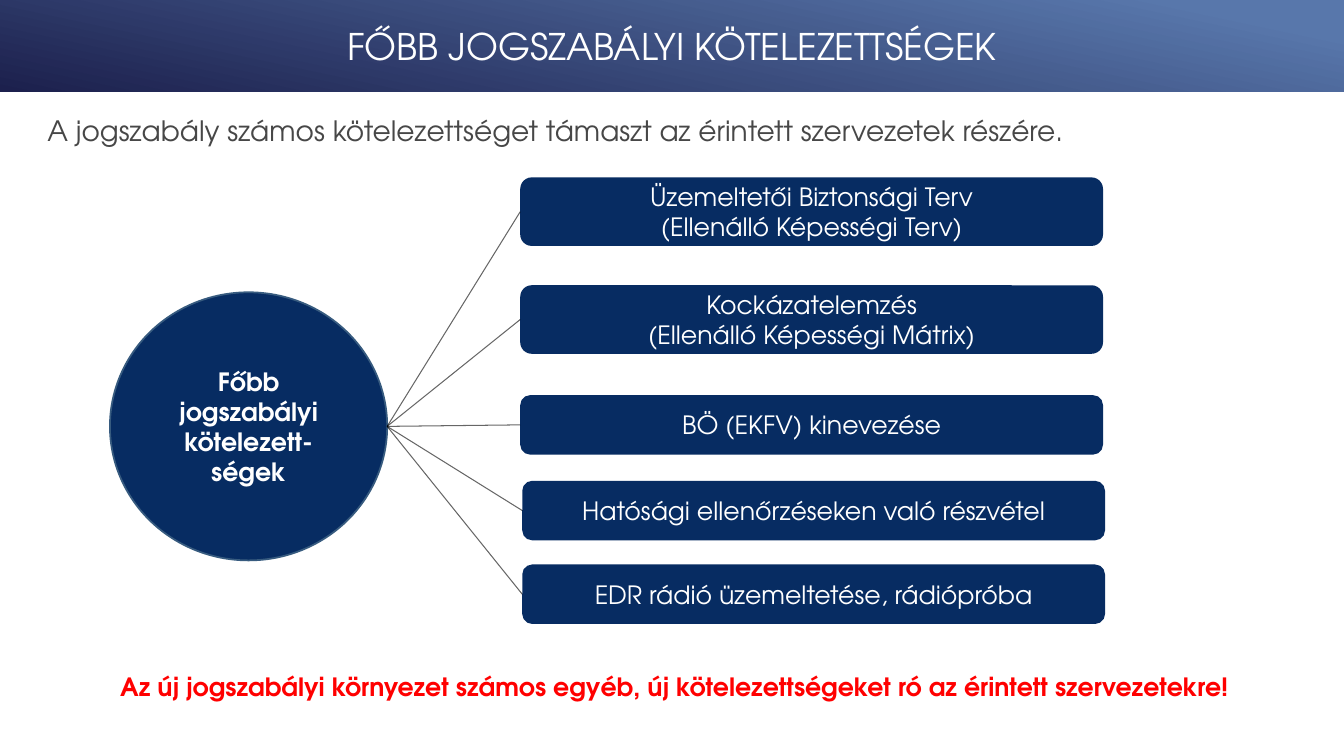
from lxml import etree
from pptx import Presentation
from pptx.dml.color import RGBColor
from pptx.enum.shapes import MSO_CONNECTOR, MSO_SHAPE
from pptx.enum.text import MSO_ANCHOR, MSO_AUTO_SIZE, PP_ALIGN
from pptx.oxml.ns import qn
from pptx.util import Inches, Pt

ROUND, OVAL = MSO_SHAPE.ROUNDED_RECTANGLE, MSO_SHAPE.OVAL
LINE = MSO_CONNECTOR.STRAIGHT
MID, TOP = MSO_ANCHOR.MIDDLE, MSO_ANCHOR.TOP
JUST, CENTER = PP_ALIGN.JUSTIFY, PP_ALIGN.CENTER
FIXED = MSO_AUTO_SIZE.NONE

FONT = "TeX Gyre Adventor"
NAVY, WHITE, RED, GREY = "072C62", "FFFFFF", "FF0000", "474747"
RIM, BLACK, LIGHT, DARK = "375B7F", "000000", "5877AB", "1C204D"

DUTIES = [
    (5.16, 1.76, 0.68, "Üzemeltetői Biztonsági Terv\n(Ellenálló Képességi Terv)"),
    (5.16, 2.83, 0.68, "Kockázatelemzés\n(Ellenálló Képességi Mátrix)"),
    (5.16, 3.92, 0.59, "BÖ (EKFV) kinevezése"),
    (5.18, 4.77, 0.59, "Hatósági ellenőrzéseken való részvétel"),
    (5.18, 5.60, 0.59, "EDR rádió üzemeltetése, rádiópróba"),
]


def paint(color, code):
    color.rgb = RGBColor.from_string(code)


def apply(item, values):
    for name, value in values.items():
        setattr(item, name, value)


class Board:
    def __init__(self, deck):
        self.slide = deck.slides.add_slide(deck.slide_layouts[1])
        self.shapes = self.slide.shapes
        self.font = {"name": FONT, "size": Pt(18), "bold": False}

    def label(self, shape, text, code, align=CENTER, anchor=MID, **font):
        frame = shape.text_frame
        apply(frame, {"text": text, "word_wrap": True,
                      "auto_size": FIXED, "vertical_anchor": anchor})
        for para in frame.paragraphs:
            para.alignment = align
            for run in para.runs:
                apply(run.font, {**self.font, **font})
                paint(run.font.color, code)

    def place(self, shape, *box):
        names = ("left", "top", "width", "height")
        apply(shape, dict(zip(names, map(Inches, box))))

    def title(self, text, *box):
        shape = self.shapes.title
        self.place(shape, *box)
        self.label(shape, text, GREY, JUST, size=Pt(20))

    def banner(self, text, *box):
        shape = self.slide.placeholders[1]
        self.place(shape, *box)
        shape.fill.gradient()
        shape.fill.gradient_angle = 258
        stops = zip(shape.fill.gradient_stops, ((0.1, LIGHT), (1, DARK)))
        for stop, (spot, code) in stops:
            stop.position = spot
            paint(stop.color, code)
        self.label(shape, text, WHITE, size=Pt(26.2))
        para = shape.text_frame.paragraphs[0]
        para.space_after = Pt(6)
        props = para._p.get_or_add_pPr()
        for name in ("marL", "indent"):
            props.set(name, "0")
        etree.SubElement(props, qn("a:buNone"))

    def block(self, kind, text, *box, rim=None, **font):
        shape = self.shapes.add_shape(kind, *map(Inches, box))
        shape.shadow.inherit = False
        shape.fill.solid()
        paint(shape.fill.fore_color, NAVY)
        if rim:
            shape.line.width = Pt(1.25)
            paint(shape.line.color, rim)
        else:
            shape.line.fill.background()
        self.label(shape, text, WHITE, **font)
        return shape

    def note(self, text, *box):
        shape = self.shapes.add_textbox(*map(Inches, box))
        self.label(shape, text, RED, anchor=TOP, bold=True)

    def link(self, hub, duty):
        x, y = hub.left + hub.width, hub.top + hub.height // 2
        wire = self.shapes.add_connector(LINE, x, y, x, y)
        wire.end_connect(duty, 1)
        wire.line.width = Pt(0.75)
        paint(wire.line.color, BLACK)
        props = wire._element.spPr
        tint = props.find(".//" + qn("a:srgbClr"))
        etree.SubElement(tint, qn("a:alpha"), val="60000")
        etree.SubElement(props, qn("a:effectLst"))


def main():
    deck = Presentation()
    apply(deck, {"slide_width": Inches(13.33), "slide_height": Inches(7.5)})
    board = Board(deck)
    board.title("A jogszabály számos kötelezettséget támaszt "
                "az érintett szervezetek részére.", 0.37, 1.05, 13.22, 0.48)
    board.banner("FŐBB JOGSZABÁLYI KÖTELEZETTSÉGEK", 0, 0, 13.33, 0.91)
    hub = board.block(OVAL, "Főbb jogszabályi kötelezett-ségek",
                      1.09, 2.9, 2.75, 2.66, rim=RIM, bold=True)
    for left, top, height, text in DUTIES:
        duty = board.block(ROUND, text, left, top, 5.78, height)
        board.link(hub, duty)
    board.note("Az új jogszabályi környezet számos egyéb, új kötelezettségeket "
               "ró az érintett szervezetekre!", 0.79, 6.61, 11.8, 0.71)
    deck.save("out.pptx")


if __name__ == "__main__":
    main()
